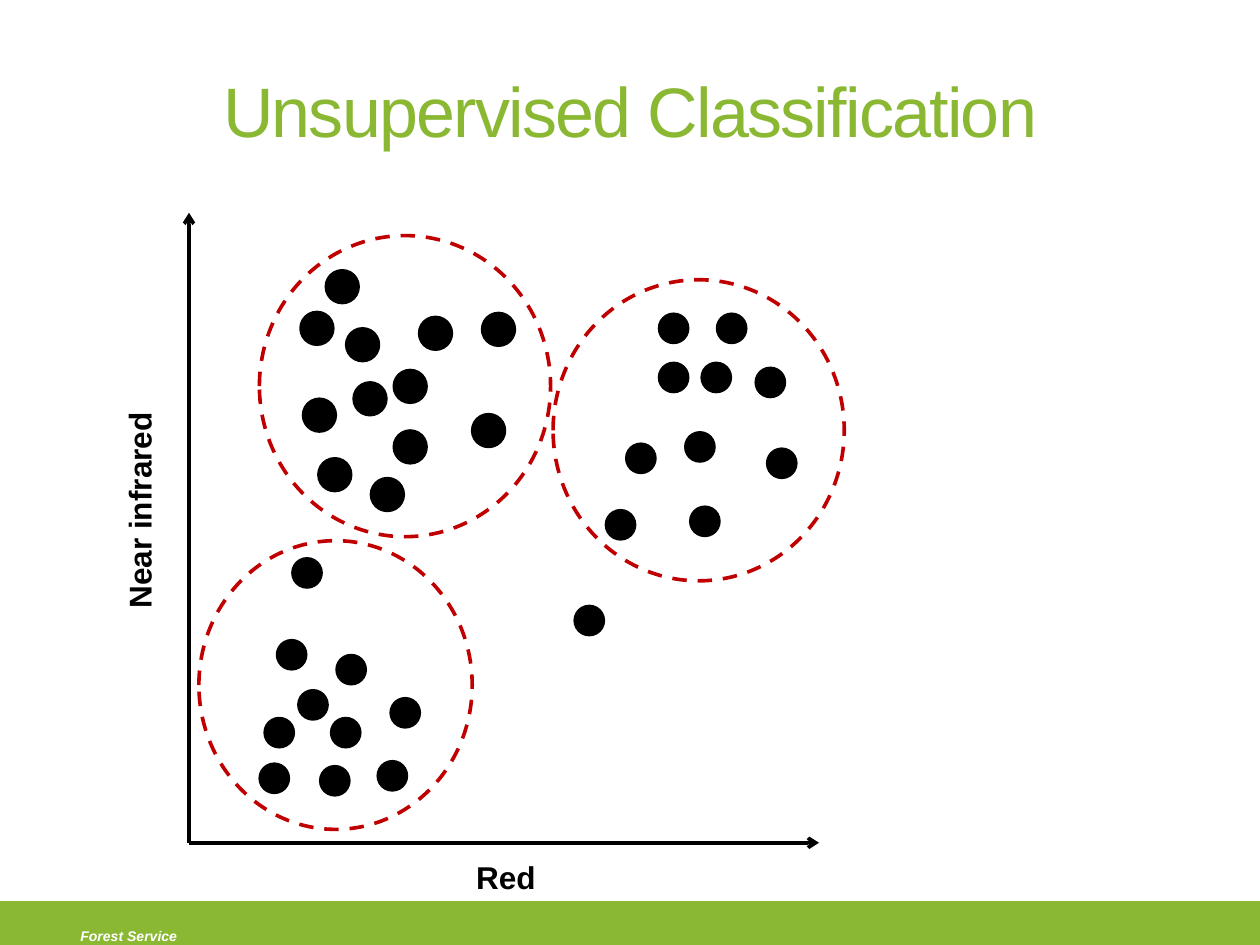
from lxml.etree import SubElement
from pptx import Presentation
from pptx.dml.color import RGBColor
from pptx.enum.dml import MSO_LINE as Dash
from pptx.enum.shapes import MSO_CONNECTOR as Conn, MSO_SHAPE as Form
from pptx.enum.text import MSO_ANCHOR as Anchor, PP_ALIGN as Align
from pptx.oxml.ns import qn
from pptx.util import Cm, Pt

GREEN = RGBColor(0x8A, 0xB8, 0x33)
BLACK = RGBColor(0, 0, 0)
WHITE = RGBColor(0xFF, 0xFF, 0xFF)
RED = RGBColor(0xC0, 0, 0)

LOW = [
    (5.31, 14.45), (5.99, 13.89), (5.56, 12.88), (6.43, 15.42), (6.65, 14.45),
    (6.76, 13.18), (5.21, 15.37), (7.59, 15.32), (5.87, 11.23), (7.85, 14.05),
]
HIGH = [
    (6.58, 5.46), (6.07, 6.3), (6.99, 6.63), (7.14, 7.72), (8.46, 6.4), (6.43, 9.25),
    (9.73, 6.32), (7.95, 8.69), (6.12, 8.05), (7.95, 7.47), (7.49, 9.65), (9.53, 8.36),
]
RIGHT = [
    (13.26, 7.29), (13.79, 8.69), (15.21, 7.39), (13.89, 10.19), (15.44, 9.02),
    (12.6, 8.92), (14.12, 7.29), (12.19, 10.26), (13.26, 6.3), (14.43, 6.3),
]
LONE = [(11.56, 12.19)]
RINGS = [(5.23, 4.75, 5.87, 6.07), (4.01, 10.9, 5.51, 5.82), (11.15, 5.64, 5.87, 6.07)]


class Pen:
    font = "Arial"
    edge = Pt(2.08)
    dot = 0.64

    def __init__(self, slide):
        self.slide = slide

    def shape(self, form, box, fill=None, line=None, dash=None):
        item = self.slide.shapes.add_shape(form, *map(Cm, box))
        item.shadow.inherit = False
        if fill is None:
            item.fill.background()
        else:
            item.fill.solid()
            item.fill.fore_color.rgb = fill
        if line is None:
            item.line.fill.background()
        else:
            item.line.color.rgb = line
            item.line.width = self.edge
            if dash:
                item.line.dash_style = dash

    def dots(self, spots, line=None):
        for x, y in spots:
            self.shape(Form.FLOWCHART_CONNECTOR, (x, y, self.dot, self.dot), BLACK, line)

    def ring(self, box):
        self.shape(Form.OVAL, box, line=RED, dash=Dash.DASH)

    def axis(self, start, end):
        line = self.slide.shapes.add_connector(Conn.STRAIGHT, *map(Cm, start + end))
        line.line.color.rgb = BLACK
        line.line.width = Pt(2)
        props = line.element.spPr
        SubElement(props.find(qn("a:ln")), qn("a:tailEnd"), type="arrow")
        SubElement(props, qn("a:effectLst"))

    def text(self, words, box, size, color, bold=False, slant=False,
             align=Align.CENTER, anchor=Anchor.TOP, turn=0, space=0):
        item = self.slide.shapes.add_textbox(*map(Cm, box))
        item.rotation = turn
        frame = item.text_frame
        frame.word_wrap = True
        frame.vertical_anchor = anchor
        para = frame.paragraphs[0]
        para.alignment = align
        run = para.add_run()
        run.text = words
        font = run.font
        font.name, font.size = self.font, Pt(size)
        font.bold, font.italic = bold, slant
        font.color.rgb = color
        if space:
            run.font._element.set("spc", str(space * 100))


def main():
    deck = Presentation()
    deck.slide_width, deck.slide_height = Cm(25.4), Cm(19.05)
    pen = Pen(deck.slides.add_slide(deck.slide_layouts[6]))

    pen.shape(Form.RECTANGLE, (0, 18.21, 25.4, 0.91), GREEN, GREEN)
    pen.text("Forest Service", (1.37, 18.57, 5.18, 0.61), 8, WHITE,
             bold=True, slant=True, align=Align.LEFT)
    pen.text("Unsupervised Classification", (1.27, 0.84, 22.86, 2.74), 40, GREEN,
             anchor=Anchor.MIDDLE, space=-1)

    root = (3.81, 16.99)
    for end in [(3.81, 4.29), (16.51, 16.99)]:
        pen.axis(root, end)
    pen.text("Near infrared", (0.56, 9.78, 4.5, 1.02), 18, BLACK, bold=True, turn=270)
    pen.text("Red", (7.95, 17.17, 4.5, 1.02), 18, BLACK, bold=True)

    pen.dots(HIGH, BLACK)
    for group in (LOW, RIGHT, LONE):
        pen.dots(group)
    for box in RINGS:
        pen.ring(box)

    deck.save("out.pptx")


if __name__ == "__main__":
    main()
